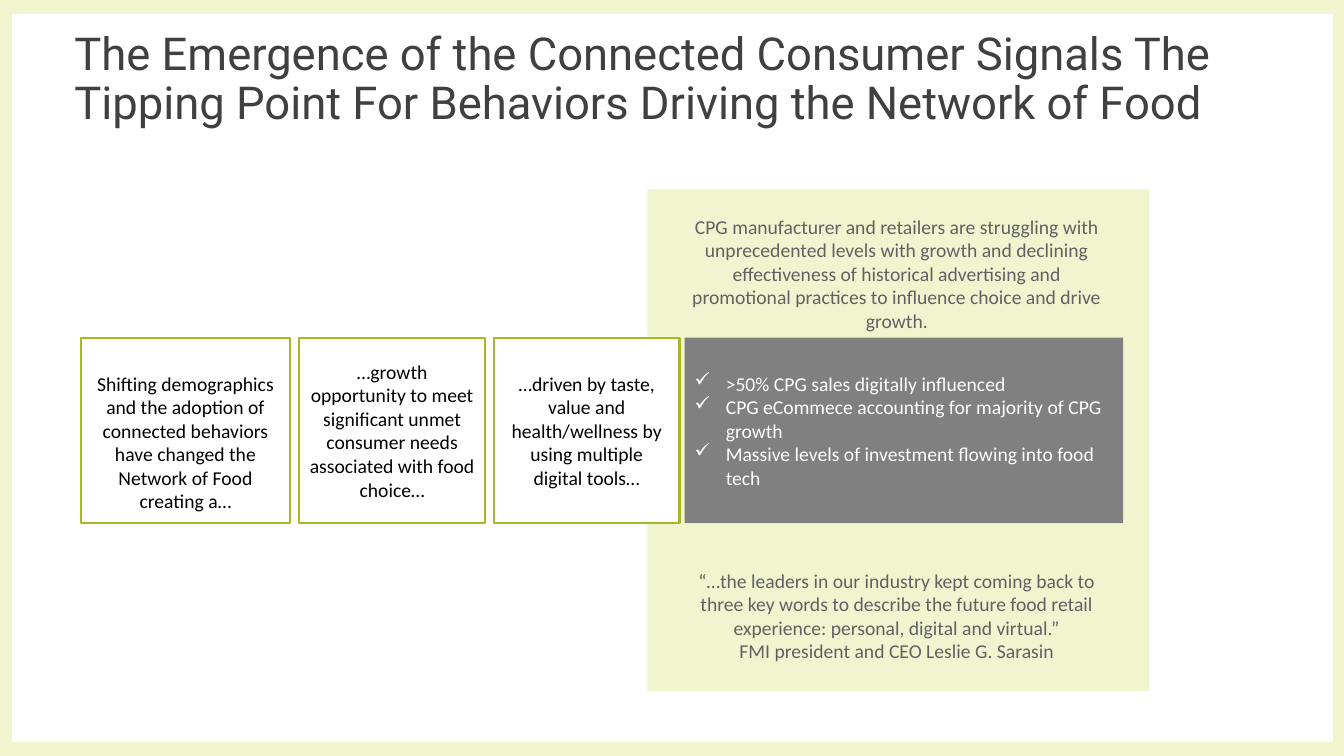
from dataclasses import dataclass

from lxml import etree
from pptx import Presentation
from pptx.dml.color import RGBColor
from pptx.enum.shapes import MSO_SHAPE
from pptx.enum.text import MSO_ANCHOR, PP_ALIGN
from pptx.oxml.ns import qn
from pptx.util import Inches, Pt

RECTANGLE = MSO_SHAPE.RECTANGLE
LEFT, CENTER = PP_ALIGN.LEFT, PP_ALIGN.CENTER
TOP, MIDDLE = MSO_ANCHOR.TOP, MSO_ANCHOR.MIDDLE


@dataclass(frozen=True)
class Theme:
    pale: str = "F0F5D0"
    white: str = "FFFFFF"
    green: str = "A6B727"
    gray: str = "808080"
    black: str = "000000"
    title_color: str = "404042"
    note_color: str = "616162"
    title_font: str = "Roboto"
    body_font: str = "Calibri"
    title_size: float = 32.4
    body_size: float = 14
    outline: float = 1.5


class SlideBuilder:
    def __init__(self, slide, theme):
        self.slide = slide
        self.theme = theme

    def background(self, color):
        fill = self.slide.background.fill
        fill.solid()
        fill.fore_color.rgb = RGBColor.from_string(color)

    def panel(self, box, color, outline=None):
        shape = self.slide.shapes.add_shape(RECTANGLE, *map(Inches, box))
        shape.shadow.inherit = False
        shape.fill.solid()
        shape.fill.fore_color.rgb = RGBColor.from_string(color)
        if outline:
            shape.line.color.rgb = RGBColor.from_string(outline)
            shape.line.width = Pt(self.theme.outline)
        else:
            shape.line.fill.background()
        return shape

    def text_box(self, box, lines, color, **options):
        shape = self.slide.shapes.add_textbox(*map(Inches, box))
        self.set_text(shape, lines, color, **options)

    def set_text(self, shape, lines, color, size=None, font=None, align=CENTER,
                 anchor=MIDDLE, top_inset=0.05, spacing=None, bullet=None):
        frame = shape.text_frame
        frame_format = {
            "word_wrap": True,
            "vertical_anchor": anchor,
            "margin_top": Inches(top_inset),
        }
        for name, value in frame_format.items():
            setattr(frame, name, value)
        font_format = {
            "size": Pt(size or self.theme.body_size),
            "name": font or self.theme.body_font,
        }
        for index, line in enumerate(lines):
            paragraph = frame.paragraphs[0] if index == 0 else frame.add_paragraph()
            paragraph.alignment = align
            paragraph.line_spacing = spacing
            if bullet:
                self.add_bullet(paragraph, bullet)
            run = paragraph.add_run()
            run.text = line
            for name, value in font_format.items():
                setattr(run.font, name, value)
            run.font.color.rgb = RGBColor.from_string(color)

    def add_bullet(self, paragraph, symbol):
        properties = paragraph._p.get_or_add_pPr()
        indent = Inches(0.31)
        properties.set("marL", str(indent))
        properties.set("indent", str(-indent))
        etree.SubElement(properties, qn("a:buChar")).set("char", symbol)


def main():
    theme = Theme()
    presentation = Presentation()
    presentation.slide_width = Inches(13.33)
    presentation.slide_height = Inches(7.5)
    slide = presentation.slides.add_slide(presentation.slide_layouts[6])
    builder = SlideBuilder(slide, theme)

    # Page frame and tinted column
    builder.background(theme.pale)
    builder.panel((0.12, 0.14, 13.1, 7.22), theme.white)
    builder.panel((6.42, 1.88, 4.98, 4.98), theme.pale)

    # Title
    builder.text_box(
        (0.64, 0.49, 12.06, 0.62),
        ["The Emergence of the Connected Consumer Signals The Tipping Point "
         "For Behaviors Driving the Network of Food"],
        theme.title_color, size=theme.title_size, font=theme.title_font,
        align=LEFT, spacing=0.9)

    # Notes above and below the evidence box
    notes = [
        (2.08, 1.27, [
            "CPG manufacturer and retailers are struggling with unprecedented "
            "levels with growth and declining effectiveness of historical "
            "advertising and promotional practices to influence choice and "
            "drive growth."]),
        (5.59, 1.04, [
            "“…the leaders in our industry kept coming back to three key words "
            "to describe the future food retail experience: personal, digital "
            "and virtual.”",
            "FMI president and CEO Leslie G. Sarasin"]),
    ]
    for top, height, lines in notes:
        builder.text_box((6.68, top, 4.43, height), lines,
                         theme.note_color, anchor=TOP)

    # Chain of outlined statements
    row_top, row_height = 3.35, 1.84
    statements = [
        (0.8, 2.08, 0.28, [
            "Shifting demographics and the adoption of connected behaviors "
            "have changed the Network of Food",
            "creating a…"]),
        (2.97, 1.84, 0.05, [
            "…growth opportunity to meet significant unmet consumer needs "
            "associated with food choice…"]),
        (4.9, 1.84, 0.05, [
            "…driven by taste, value and health/wellness by using multiple "
            "digital tools…"]),
    ]
    for left, width, top_inset, lines in statements:
        shape = builder.panel((left, row_top, width, row_height),
                              theme.white, theme.green)
        builder.set_text(shape, lines, theme.black, top_inset=top_inset)

    # Evidence box
    evidence = builder.panel((6.79, row_top, 4.35, row_height), theme.gray)
    builder.set_text(evidence, [
        ">50% CPG sales digitally influenced",
        "CPG eCommece accounting for majority of CPG growth",
        "Massive levels of investment flowing into food tech",
    ], theme.white, align=LEFT, bullet="✓")

    presentation.save("out.pptx")


if __name__ == "__main__":
    main()
